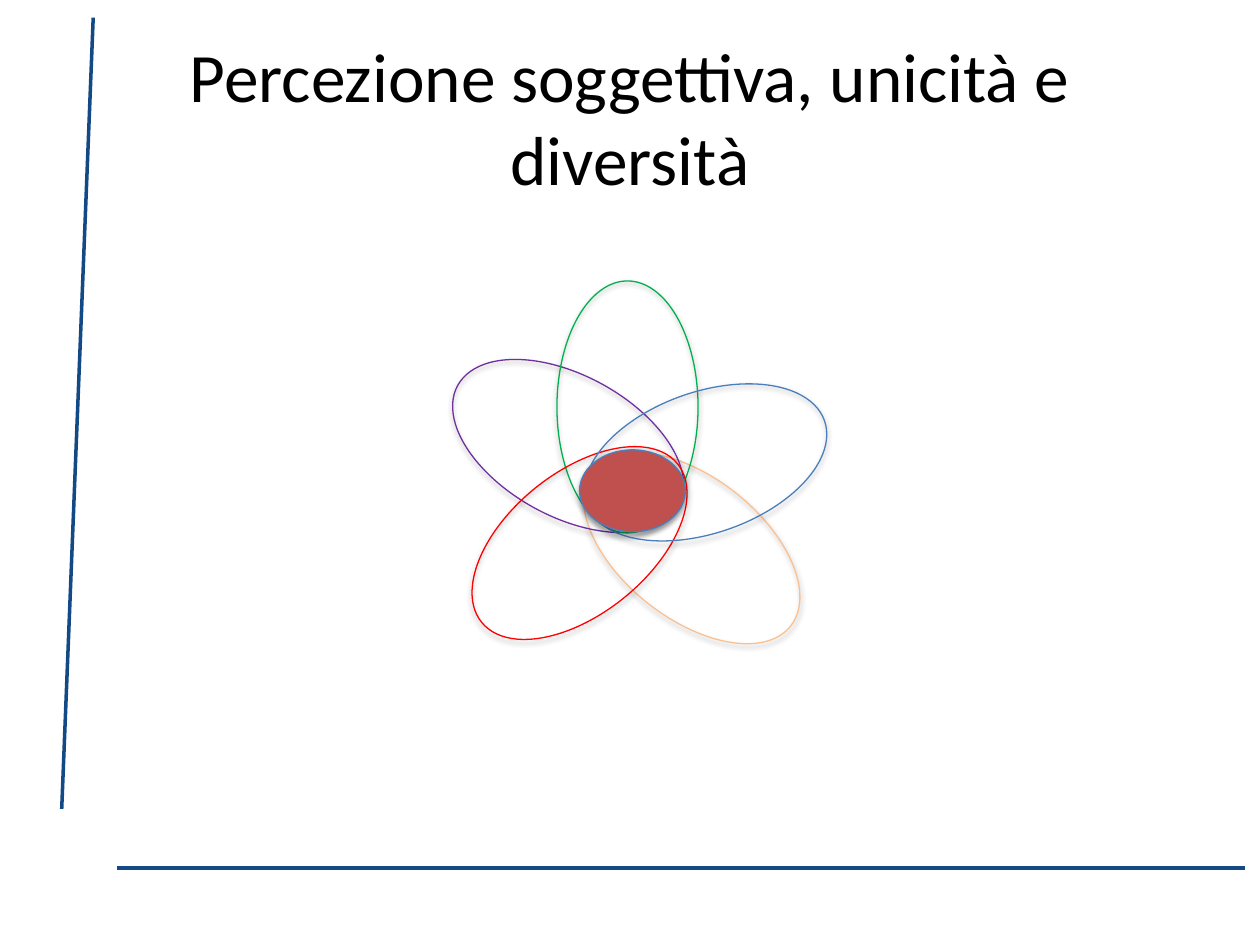
from lxml import etree
from pptx import Presentation
from pptx import util as u
from pptx.dml.color import RGBColor
from pptx.enum import shapes, text
from pptx.oxml.ns import qn

# Content
TITLE = "Percezione soggettiva, unicità e diversità"
TITLE_BOX = (0.5, 0.3, 9, 1.25)
TITLE_FONT = {"name": "Calibri", "size": u.Pt(39.6), "bold": False}
RULE_COLOUR = "134A85"
RULES = [((0.74, 0.14), (0.49, 6.42)), ((9.88, 6.89), (0.93, 6.89))]

PETAL_SIZE = (1.12, 2)
PETALS = [  # left, top, rotation, outline
    (4.93, 3.35, 308.2, "FAC090"),
    (3.95, 2.54, 298.7, "7030A0"),
    (4.42, 2.23, 0, "00B050"),
    (4.04, 3.31, 231, "FF0000"),
    (5.04, 2.67, 70.7, "4B7EBC"),
]
CORE_BOX = (4.6, 3.57, 0.84, 0.65)
CORE_FILL, CORE_LINE = "C0504D", "4B7EBC"


def colour(value):
    return RGBColor.from_string(value)


def inches(values):
    return [u.Inches(v) for v in values]


def add_shadow(ellipse):
    ellipse.shadow.inherit = False
    effects = ellipse._element.spPr.find(qn("a:effectLst"))
    shadow = etree.SubElement(effects, qn("a:outerShdw"), blurRad=str(u.Pt(3.1)),
                              dist=str(u.Pt(1.8)), dir="5400000", rotWithShape="0")
    black = etree.SubElement(shadow, qn("a:srgbClr"), val="000000")
    etree.SubElement(black, qn("a:alpha"), val="35000")


def add_ellipse(slide, box, outline, fill=None, rotation=0):
    ellipse = slide.shapes.add_shape(shapes.MSO_SHAPE.OVAL, *inches(box))
    ellipse.rotation = rotation
    if fill:
        ellipse.fill.solid()
        ellipse.fill.fore_color.rgb = colour(fill)
    else:
        ellipse.fill.background()
    ellipse.line.color.rgb = colour(outline)
    ellipse.line.width = u.Pt(0.75)
    add_shadow(ellipse)


def add_rule(slide, start, end):
    rule = slide.shapes.add_connector(shapes.MSO_CONNECTOR.STRAIGHT,
                                      *inches(start + end))
    rule.line.color.rgb = colour(RULE_COLOUR)
    rule.line.width = u.Pt(2)
    etree.SubElement(rule._element.spPr, qn("a:effectLst"))


def add_title(slide):
    title = slide.shapes.title
    for name, value in zip(("left", "top", "width", "height"), inches(TITLE_BOX)):
        setattr(title, name, value)
    frame = title.text_frame
    frame.text = TITLE
    frame.word_wrap = True
    frame.auto_size = text.MSO_AUTO_SIZE.NONE
    frame.vertical_anchor = text.MSO_ANCHOR.MIDDLE
    paragraph = frame.paragraphs[0]
    paragraph.alignment = text.PP_ALIGN.CENTER
    font = paragraph.runs[0].font
    for name, value in TITLE_FONT.items():
        setattr(font, name, value)
    font.color.rgb = colour("000000")


def main():
    deck = Presentation()
    deck.slide_width, deck.slide_height = inches((10, 7.5))
    slide = deck.slides.add_slide(deck.slide_layouts[5])

    # Frame rules and title
    for start, end in RULES:
        add_rule(slide, start, end)
    add_title(slide)

    # Flower: petals, then the core on top
    for left, top, rotation, outline in PETALS:
        add_ellipse(slide, (left, top) + PETAL_SIZE, outline, rotation=rotation)
    add_ellipse(slide, CORE_BOX, CORE_LINE, fill=CORE_FILL)

    deck.save("out.pptx")


if __name__ == "__main__":
    main()
